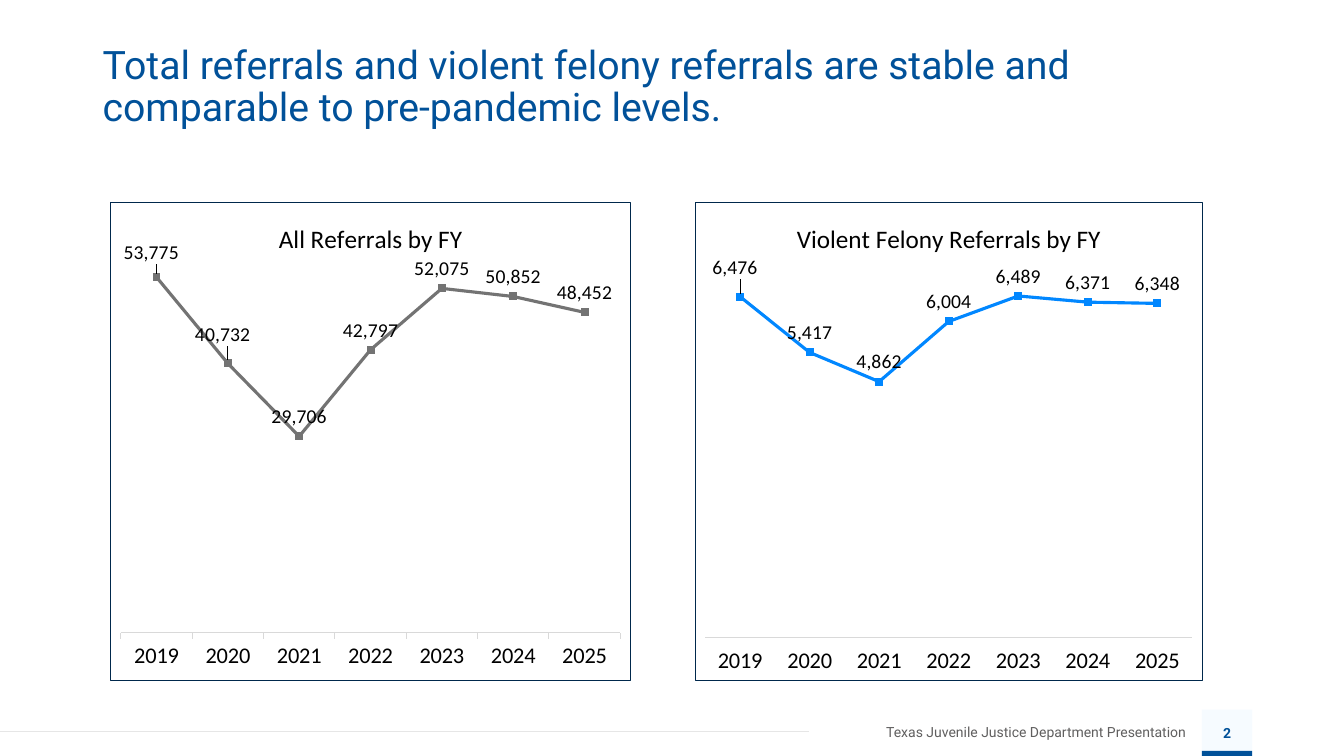
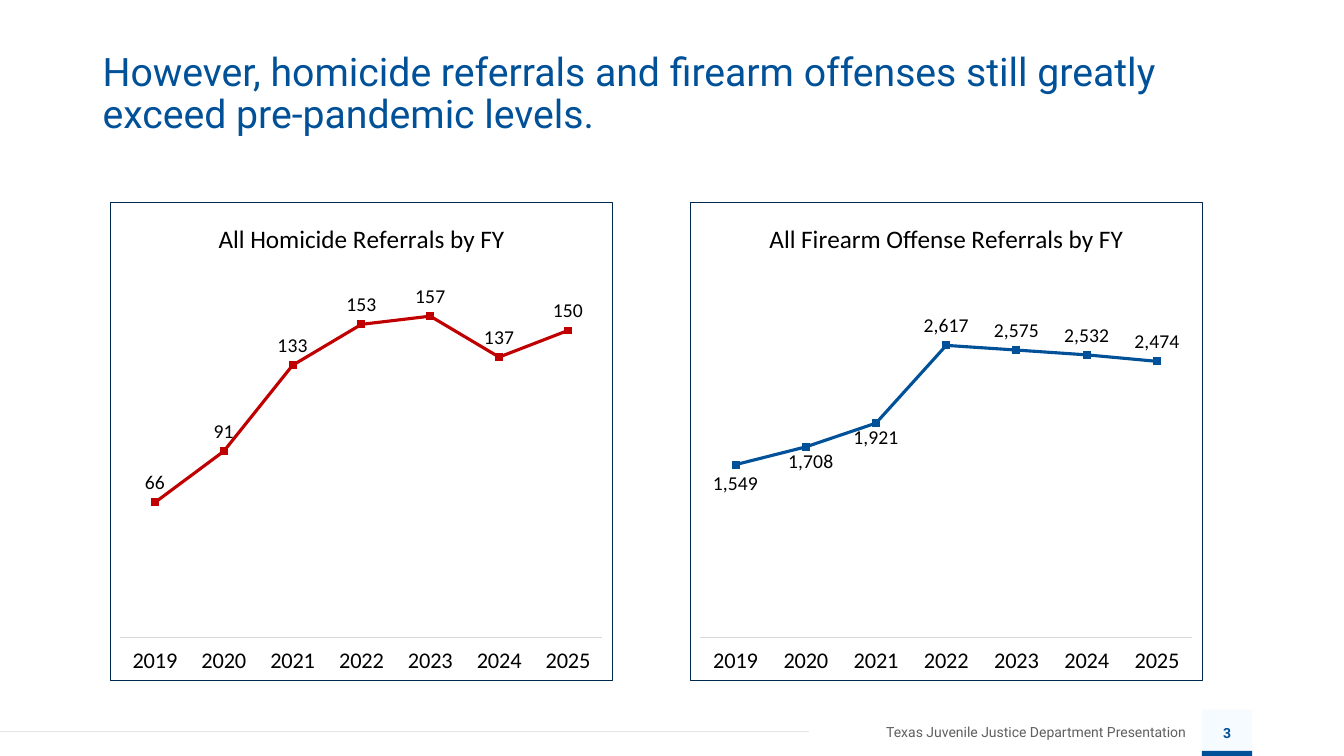
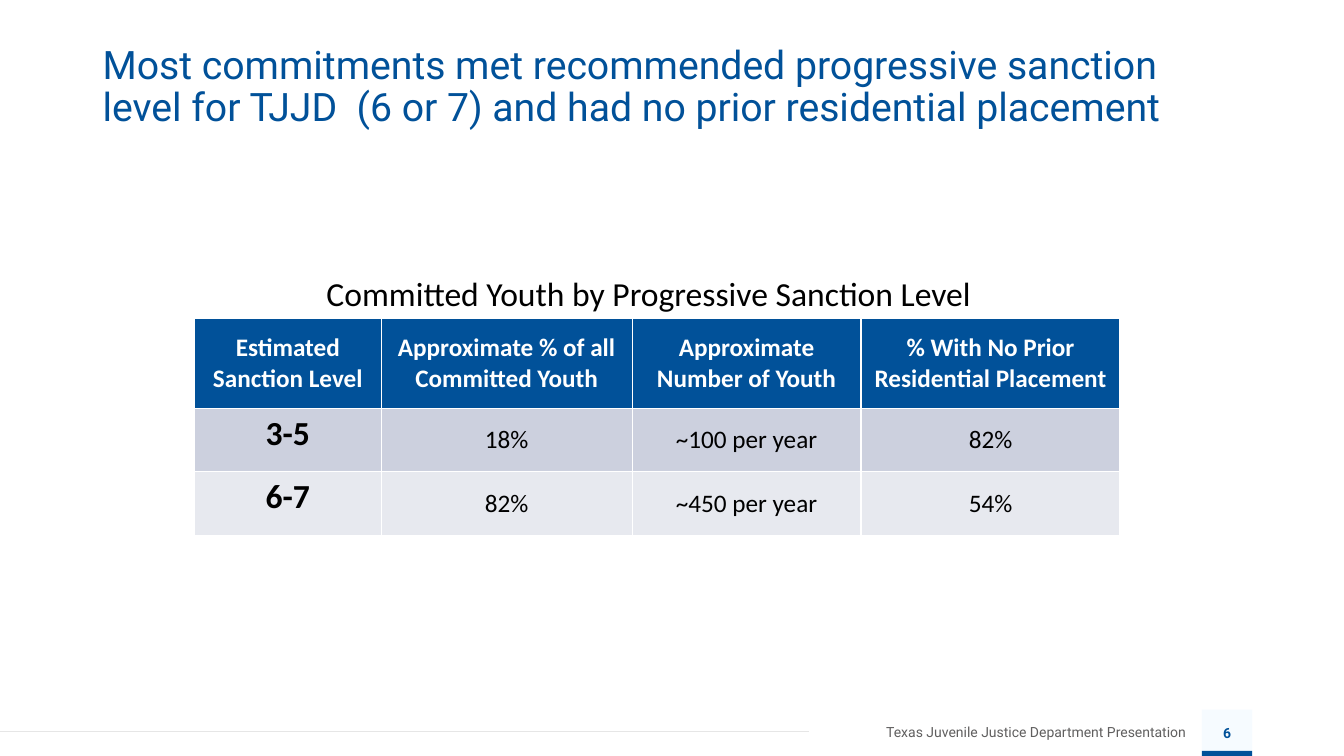
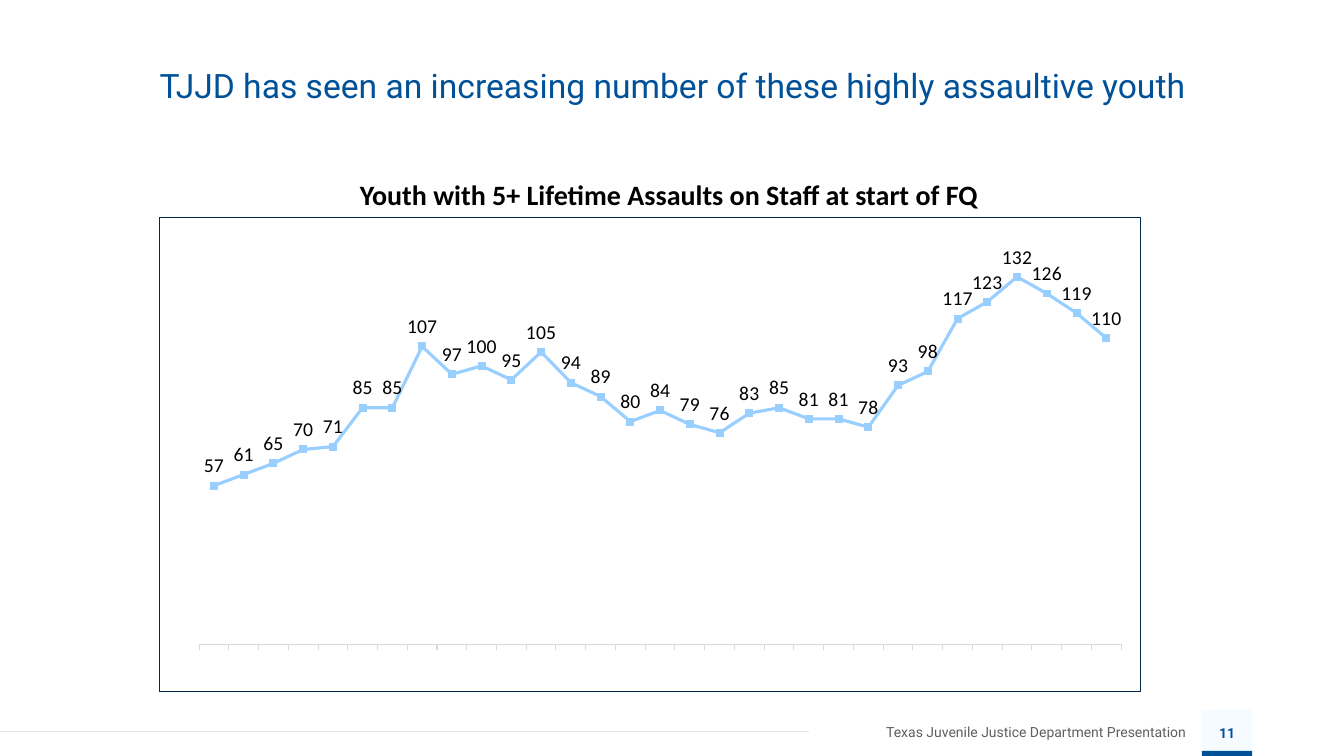
from lxml.etree import SubElement as Sub
from pptx import Presentation
from pptx.chart.data import CategoryChartData as ChartData
from pptx.dml.color import RGBColor
from pptx.enum.chart import XL_CHART_TYPE as Kind
from pptx.enum.chart import XL_LABEL_POSITION as Pos
from pptx.enum.chart import XL_TICK_LABEL_POSITION as Ticks
from pptx.enum.chart import XL_TICK_MARK as Mark
from pptx.enum.shapes import MSO_CONNECTOR as Conn
from pptx.enum.shapes import MSO_SHAPE as Shape
from pptx.enum.text import MSO_ANCHOR as Anchor
from pptx.enum.text import PP_ALIGN as Align
from pptx.oxml import parse_xml
from pptx.oxml.ns import nsdecls, qn
from pptx.util import Inches, Pt

BLUE, NAVY, BLACK, WHITE = "015199", "00284C", "000000", "FFFFFF"
GREY, PALE, RULE, AXIS = "605F5F", "F6FBFF", "E6E6E6", "D9D9D9"
HEAD, BODY = "Roboto", "Calibri"
FOOTER = "Texas Juvenile Justice Department Presentation"

YEARS = [str(year) for year in range(2019, 2026)]
QUARTERS = [str(2019 + i // 4) for i in range(31)]

# "moved" maps a point to its label position and shift, as shares of the chart.
# "plot" is the inner plot area (left, top, width, height), also as shares.
REFERRALS = dict(
    title="All Referrals by FY", at=(1.09, 2, 5.17, 4.76), color="737373",
    vals=[53775, 40732, 29706, 42797, 52075, 50852, 48452], top=55000,
    plot=(0.02, 0.14, 0.96, 0.76), tick=Mark.OUTSIDE,
    moved={0: (Pos.ABOVE, -0.01, -0.01), 1: (Pos.ABOVE, -0.01, -0.02)})
FELONIES = dict(
    title="Violent Felony Referrals by FY", at=(6.89, 2, 5.04, 4.76),
    color="0187FF", vals=[6476, 5417, 4862, 6004, 6489, 6371, 6348],
    top=7000, moved={0: (Pos.ABOVE, -0.01, -0.02)})
HOMICIDES = dict(
    title="All Homicide Referrals by FY", at=(1.09, 2, 4.99, 4.76),
    color="C00000", vals=[66, 91, 133, 153, 157, 137, 150], top=180)
FIREARMS = dict(
    title="All Firearm Offense Referrals by FY", at=(6.84, 2, 5.09, 4.76),
    color=BLUE, vals=[1549, 1708, 1921, 2617, 2575, 2532, 2474], top=3000,
    plot=(0.02, 0.21, 0.96, 0.7),
    moved={0: (Pos.BELOW, 0, 0), 1: (Pos.BELOW, 0.01, -0.01),
           2: (Pos.BELOW, 0, -0.01)})
ASSAULTS = dict(
    at=(1.58, 2.15, 9.74, 4.72), color="99CFFF", cats=QUARTERS, top=150,
    vals=[57, 61, 65, 70, 71, 85, 85, 107, 97, 100, 95, 105, 94, 89, 80, 84,
          79, 76, 83, 85, 81, 81, 78, 93, 98, 117, 123, 132, 126, 119, 110],
    plot=(0.04, 0.02, 0.94, 0.88), tick=Mark.OUTSIDE, named=False)

ROWS = [
    ("Estimated Sanction Level", "Approximate % of all Committed Youth",
     "Approximate Number of Youth", "% With No Prior Residential Placement"),
    ("3-5", "18%", "~100 per year", "82%"),
    ("6-7", "82%", "~450 per year", "54%"),
]
WIDTHS, HEIGHTS = (1.85, 2.49, 2.27, 2.57), (0.89, 0.63, 0.63)
FILLS = (BLUE, "CCD0DE", "E7E9EF")

SLIDES = [
    dict(num=2, title="Total referrals and violent felony referrals are stable "
         "and comparable to pre-pandemic levels.",
         charts=[REFERRALS, FELONIES]),
    dict(num=3, title="However, homicide referrals and firearm offenses still "
         "greatly exceed pre-pandemic levels.", top=0.47,
         charts=[HOMICIDES, FIREARMS]),
    dict(num=6, title="Most commitments met recommended progressive sanction "
         "level for TJJD  (6 or 7) and had no prior residential placement",
         caption=("Committed Youth by Progressive Sanction Level",
                  (3.14, 2.66, 6.76, 0.5), 24, False), table=ROWS),
    dict(num=11, title="TJJD has seen an increasing number of these highly "
         "assaultive youth", size=24, align=Align.CENTER, anchor=Anchor.MIDDLE,
         charts=[ASSAULTS],
         caption=("Youth with 5+ Lifetime Assaults on Staff at start of FQ",
                  (3.47, 1.71, 6.39, 0.44), 20, True)),
]


def rgb(code):
    return RGBColor.from_string(code)


def box(at):
    return [Inches(n) for n in at]


def style(font, size, color=BLACK, face=BODY, bold=False):
    font.size, font.name, font.bold = Pt(size), face, bold
    font.color.rgb = rgb(color)


def add_text(slide, text, at, size, color=BLACK, face=BODY, bold=False,
             align=Align.LEFT, anchor=Anchor.TOP, inset=True, wrap=True):
    frame = slide.shapes.add_textbox(*box(at)).text_frame
    frame.word_wrap, frame.vertical_anchor = wrap, anchor
    if not inset:
        frame.margin_left = frame.margin_right = 0
        frame.margin_top = frame.margin_bottom = 0
    frame.text = text
    para = frame.paragraphs[0]
    para.alignment = align
    style(para.runs[0].font, size, color, face, bold)
    return para


def add_rect(slide, at, color):
    rect = slide.shapes.add_shape(Shape.RECTANGLE, *box(at))
    rect.shadow.inherit = False
    rect.fill.solid()
    rect.fill.fore_color.rgb = rgb(color)
    rect.line.fill.background()


def add_footer(slide, num):
    add_text(slide, FOOTER, (8.02, 7.18, 3.74, 0.17), 10, GREY, HEAD,
             align=Align.RIGHT, anchor=Anchor.MIDDLE, inset=False)
    add_rect(slide, (11.92, 7.04, 0.5, 0.46), PALE)
    add_text(slide, str(num), (11.99, 7.19, 0.36, 0.17), 10, BLUE, HEAD, True,
             Align.CENTER, Anchor.MIDDLE, inset=False)
    add_rect(slide, (11.92, 7.45, 0.5, 0.05), BLUE)
    rule = slide.shapes.add_connector(Conn.STRAIGHT, *box((8.02, 7.26, 0, 7.26)))
    rule.line.color.rgb, rule.line.width = rgb(RULE), Pt(0.5)
    Sub(rule._element.spPr, qn("a:effectLst"))


def layout(**parts):
    """Make a manual chart layout from its named values."""
    node = parse_xml(f"<c:layout {nsdecls('c')}><c:manualLayout/></c:layout>")
    for key, val in parts.items():
        Sub(node[0], qn(f"c:{key}")).set("val", str(val))
    return node


def place_plot(chart, plot):
    area = chart._chartSpace.chart.plotArea
    for old in area.findall(qn("c:layout")):
        area.remove(old)
    x, y, w, h = plot
    area.insert(0, layout(layoutTarget="inner", xMode="edge", yMode="edge",
                          x=x, y=y, w=w, h=h))


def add_border(chart):
    chart._chartSpace.chart.addnext(parse_xml(
        f'<c:spPr {nsdecls("c", "a")}><a:noFill/><a:ln w="{Pt(0.75)}">'
        f'<a:solidFill><a:srgbClr val="{NAVY}"/></a:solidFill></a:ln></c:spPr>'))


def label_points(series, moved):
    labels = series.data_labels
    labels.show_value, labels.position = True, Pos.ABOVE
    labels.number_format, labels.number_format_is_linked = "#,##0", False
    style(labels.font, 14)
    for i, (pos, x, y) in moved.items():
        label = series.points[i].data_label
        style(label.font, 14)
        label.position = pos
        if x or y:
            spot = labels._element.find(f"{qn('c:dLbl')}[{i + 1}]")
            spot.find(qn("c:idx")).addnext(layout(x=x, y=y))


def add_chart(slide, at, color, vals, top, title=None, cats=YEARS,
              plot=(0.02, 0.14, 0.96, 0.77), tick=Mark.NONE, named=True,
              moved={}):
    data = ChartData(number_format="#,##0")
    data.categories = cats
    data.add_series("Series 1", vals)
    chart = slide.shapes.add_chart(Kind.LINE, *box(at), data).chart
    style(chart.font, 10)
    chart.has_legend = False
    chart.has_title = bool(title)
    if title:
        frame = chart.chart_title.text_frame
        frame.text = title
        style(frame.paragraphs[0].runs[0].font, 18)
    add_border(chart)
    place_plot(chart, plot)

    value = chart.value_axis
    value.minimum_scale, value.maximum_scale = 0, top
    value.has_major_gridlines = value.visible = False
    axis = chart.category_axis
    axis.major_tick_mark, axis.minor_tick_mark = tick, Mark.NONE
    axis.tick_label_position = Ticks.LOW if named else Ticks.NONE
    style(axis.tick_labels.font, 16)
    axis.format.line.color.rgb = rgb(AXIS)
    axis.format.line.width = Pt(0.75)

    chart.plots[0].vary_by_categories = False
    series = chart.plots[0].series[0]
    series.smooth = False
    series.marker.style = None
    series.format.line.color.rgb = rgb(color)
    series.format.line.width = Pt(2.25)
    label_points(series, moved)


def add_table(slide, rows):
    size = (sum(WIDTHS), sum(HEIGHTS))
    table = slide.shapes.add_table(len(rows), len(WIDTHS),
                                   *box((1.93, 3.16, *size))).table
    for col, width in zip(table.columns, WIDTHS):
        col.width = Inches(width)
    for r, texts in enumerate(rows):
        table.rows[r].height = Inches(HEIGHTS[r])
        for c, text in enumerate(texts):
            cell = table.cell(r, c)
            level = r > 0 and c == 0
            cell.fill.solid()
            cell.fill.fore_color.rgb = rgb(FILLS[r])
            cell.vertical_anchor = Anchor.TOP if level else Anchor.MIDDLE
            cell.text = text
            para = cell.text_frame.paragraphs[0]
            para.alignment = Align.CENTER
            style(para.runs[0].font, 24 if level else 18,
                  BLACK if r else WHITE, bold=level or r == 0)


def add_slide(deck, num, title, top=0.4, size=28, align=Align.LEFT,
              anchor=Anchor.TOP, charts=(), caption=None, table=None):
    slide = deck.slides.add_slide(deck.slide_layouts[6])
    add_footer(slide, num)
    head = add_text(slide, title, (0.92, top, 11.5, 0.93), size, BLUE, HEAD,
                    align=align, anchor=anchor)
    head.line_spacing = 0.9
    for chart in charts:
        add_chart(slide, **chart)
    if table:
        add_table(slide, table)
    if caption:
        text, at, size, bold = caption
        add_text(slide, text, at, size, bold=bold, wrap=not bold)


def main():
    deck = Presentation()
    deck.slide_width, deck.slide_height = Inches(13.33), Inches(7.5)
    for spec in SLIDES:
        add_slide(deck, **spec)
    deck.save("out.pptx")


if __name__ == "__main__":
    main()
